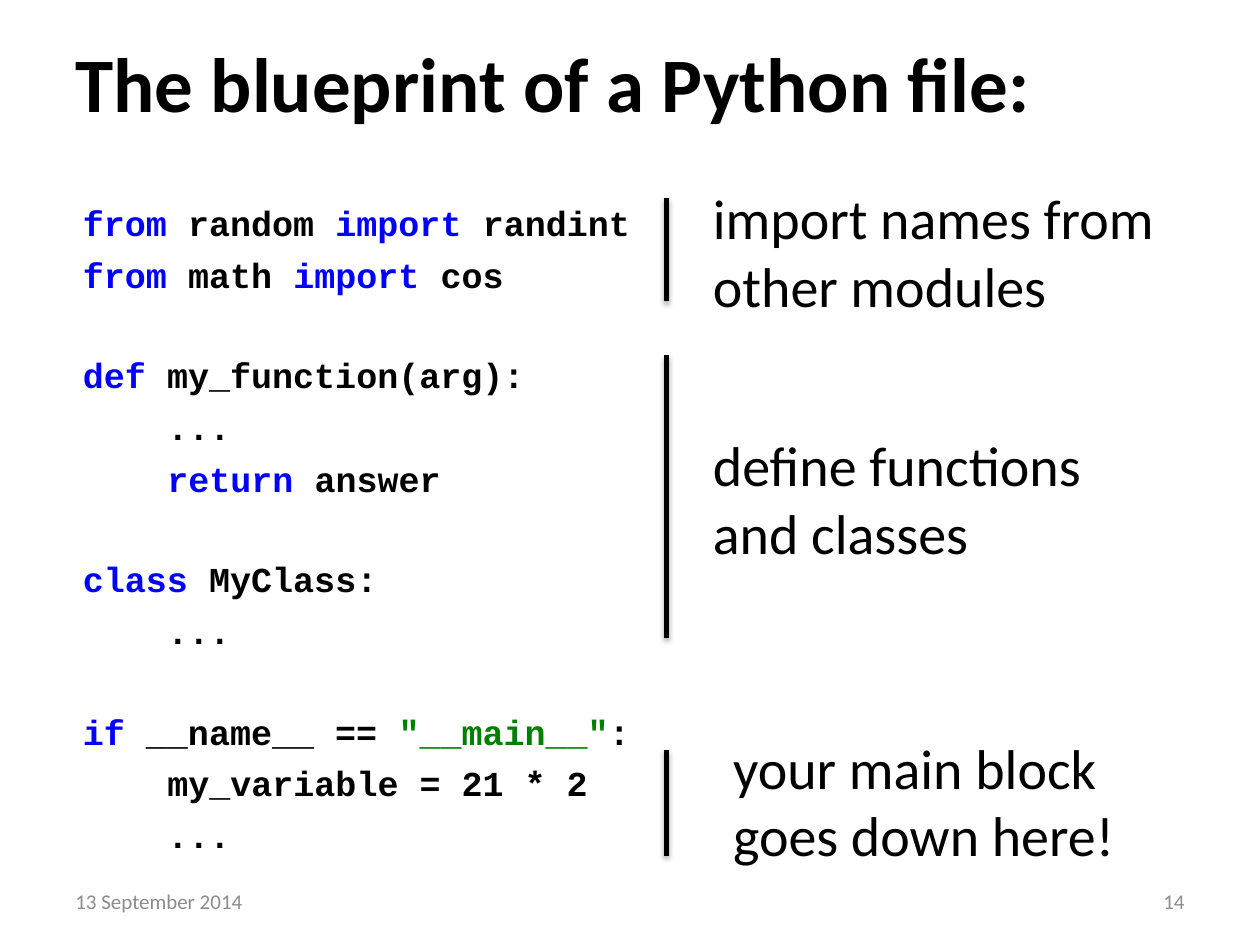
from lxml.etree import SubElement
from pptx import Presentation
from pptx.dml.color import RGBColor
from pptx.enum.shapes import MSO_CONNECTOR
from pptx.enum.text import MSO_ANCHOR, PP_ALIGN
from pptx.oxml.ns import qn
from pptx.util import Inches, Pt

BLACK = "000000"
GRAY = "8C8C8C"
KEYWORD = "0000FF"
STRING = "008000"

CODE_BLOCKS = [
    [
        (0, [("from", KEYWORD), (" random ", BLACK), ("import ", KEYWORD), ("randint", BLACK)]),
        (0, [("from", KEYWORD), (" math ", BLACK), ("import ", KEYWORD), ("cos", BLACK)]),
    ],
    [
        (0, [("def ", KEYWORD), ("my_function(arg):", BLACK)]),
        (1, [("...", BLACK)]),
        (1, [("return", KEYWORD), (" answer", BLACK)]),
    ],
    [
        (0, [("class ", KEYWORD), ("MyClass:", BLACK)]),
        (1, [("...", BLACK)]),
    ],
    [
        (0, [("if", KEYWORD), (" __name__ == ", BLACK), ('"__main__"', STRING), (":", BLACK)]),
        (1, [("my_variable = 21 * 2", BLACK)]),
        (1, [("...", BLACK)]),
    ],
]

NOTES = [
    ("import names from other modules", 5.56, 1.41, 3.94),
    ("define functions and classes", 5.56, 3.37, 3.63),
    ("your main block goes down here!", 5.72, 5.77, 3.67),
]

BAR_LEFT = 5.29
BAR_SPANS = [(1.57, 2.39), (2.82, 5.06), (5.95, 6.79)]


def color(value):
    return RGBColor.from_string(value)


def add_frame(slide, left, top, width, height, anchor=MSO_ANCHOR.TOP):
    shape = slide.shapes.add_textbox(Inches(left), Inches(top), Inches(width), Inches(height))
    frame = shape.text_frame
    frame.word_wrap = True
    frame.vertical_anchor = anchor
    return frame


def style(paragraph, size, font="Calibri", bold=False):
    paragraph.font.name = font
    paragraph.font.size = Pt(size)
    paragraph.font.bold = bold


def add_label(slide, text, box, size, fill=BLACK, bold=False,
              anchor=MSO_ANCHOR.TOP, align=PP_ALIGN.LEFT):
    paragraph = add_frame(slide, *box, anchor).paragraphs[0]
    paragraph.text = text
    paragraph.alignment = align
    style(paragraph, size, bold=bold)
    paragraph.font.color.rgb = color(fill)


def add_code(slide):
    frame = add_frame(slide, 0.5, 1.11, 9, 4.84)
    frame.margin_top = Inches(0.49)
    paragraph = None
    for block in CODE_BLOCKS:
        for number, (level, tokens) in enumerate(block):
            if paragraph is None:
                paragraph = frame.paragraphs[0]
                paragraph.space_before = Pt(0)
            else:
                paragraph = frame.add_paragraph()
                paragraph.space_before = Pt(5.5 if number else 33.5)
            style(paragraph, 20, "Courier New", True)
            indent = Inches(0.06 + 0.67 * level)
            paragraph._p.get_or_add_pPr().set("marL", str(indent))
            for text, fill in tokens:
                run = paragraph.add_run()
                run.text = text
                run.font.color.rgb = color(fill)


def add_bar(slide, top, bottom):
    bar = slide.shapes.add_connector(
        MSO_CONNECTOR.STRAIGHT,
        Inches(BAR_LEFT), Inches(top), Inches(BAR_LEFT), Inches(bottom))
    bar.line.color.rgb = color(BLACK)
    bar.line.width = Pt(3)
    effects = SubElement(bar._element.spPr, qn("a:effectLst"))
    shadow = SubElement(effects, qn("a:outerShdw"), blurRad=str(Pt(3.1)),
                        dist=str(Pt(1.8)), dir="5400000", rotWithShape="0")
    tint = SubElement(shadow, qn("a:srgbClr"), val=BLACK)
    SubElement(tint, qn("a:alpha"), val="35000")


def main():
    presentation = Presentation()
    presentation.slide_width = Inches(10)
    presentation.slide_height = Inches(7.5)
    slide = presentation.slides.add_slide(presentation.slide_layouts[6])

    add_label(slide, "The blueprint of a Python file:", (0.5, 0.02, 9, 1.25), 44,
              bold=True, anchor=MSO_ANCHOR.MIDDLE)
    add_code(slide)
    add_label(slide, "13 September 2014", (0.5, 6.95, 2.33, 0.4), 12, GRAY,
              anchor=MSO_ANCHOR.MIDDLE)
    add_label(slide, "14", (7.17, 6.95, 2.33, 0.4), 12, GRAY,
              anchor=MSO_ANCHOR.MIDDLE, align=PP_ALIGN.RIGHT)
    for top, bottom in BAR_SPANS:
        add_bar(slide, top, bottom)
    for text, left, top, width in NOTES:
        add_label(slide, text, (left, top, width, 1.18), 32)

    presentation.save("out.pptx")


if __name__ == "__main__":
    main()
